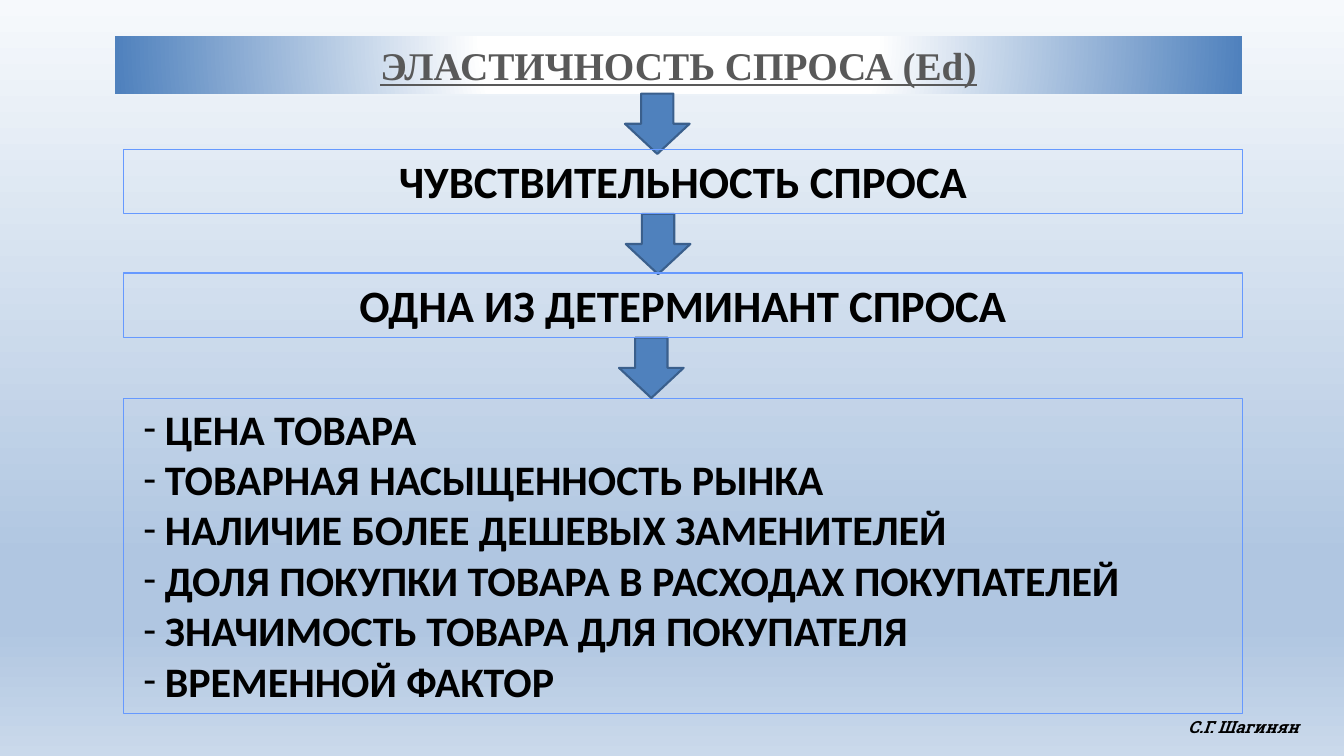
from lxml import etree
from pptx import Presentation
from pptx.dml.color import RGBColor
from pptx.enum.shapes import MSO_SHAPE
from pptx.enum.text import MSO_ANCHOR, MSO_AUTO_SIZE, PP_ALIGN
from pptx.oxml.ns import qn
from pptx.util import Cm, Pt

RECT, DOWN_ARROW = MSO_SHAPE.RECTANGLE, MSO_SHAPE.DOWN_ARROW
TOP, NO_FIT = MSO_ANCHOR.TOP, MSO_AUTO_SIZE.NONE
LEFT, CENTER = PP_ALIGN.LEFT, PP_ALIGN.CENTER

COLORS = {
    "sky_top": "F6F9FC", "sky": "B0C6E1", "sky_bottom": "CAD9EB",
    "white": "FFFFFF", "blue": "4F81BD", "arrow_line": "3A5F8C",
    "frame": "6699FF", "title": "595959", "text": "000000",
}
STEPS = ["ЧУВСТВИТЕЛЬНОСТЬ СПРОСА", "ОДНА ИЗ ДЕТЕРМИНАНТ СПРОСА"]
FACTORS = [
    "ЦЕНА ТОВАРА",
    "ТОВАРНАЯ НАСЫЩЕННОСТЬ РЫНКА",
    "НАЛИЧИЕ БОЛЕЕ ДЕШЕВЫХ ЗАМЕНИТЕЛЕЙ",
    "ДОЛЯ ПОКУПКИ ТОВАРА В РАСХОДАХ ПОКУПАТЕЛЕЙ",
    "ЗНАЧИМОСТЬ ТОВАРА ДЛЯ ПОКУПАТЕЛЯ",
    "ВРЕМЕННОЙ ФАКТОР",
]


def rgb(name):
    return RGBColor.from_string(COLORS[name])


def set_gradient(owner, fill, stops):
    """Fill with (percent, colour) stops and return the emptied gradFill."""
    fill.gradient()
    grad = next(owner.element.iter(qn("a:gradFill")))
    for child in list(grad):
        grad.remove(child)
    gs_list = etree.SubElement(grad, qn("a:gsLst"))
    for percent, name in stops:
        gs = etree.SubElement(gs_list, qn("a:gs"), pos=str(percent * 1000))
        etree.SubElement(gs, qn("a:srgbClr"), val=COLORS[name])
    return grad


def place(sp, box):
    sp.left, sp.top, sp.width, sp.height = (Cm(v) for v in box)


def frame(sp):
    sp.fill.background()
    sp.line.color.rgb = rgb("frame")
    sp.line.width = Pt(0.75)


def write(sp, text, size, font="Calibri", color="text", align=CENTER):
    tf = sp.text_frame
    tf.text = text
    tf.word_wrap = True
    tf.auto_size = NO_FIT
    tf.vertical_anchor = TOP
    for p in tf.paragraphs:
        p.alignment = align
        p.space_before = Pt(0)
        for r in p.runs:
            r.font.name = font
            r.font.size = Pt(size)
            r.font.bold = True
            r.font.color.rgb = rgb(color)
    return tf


def add_background(s):
    stops = [(0, "sky_top"), (74, "sky"), (83, "sky"), (100, "sky_bottom")]
    grad = set_gradient(s, s.background.fill, stops)
    etree.SubElement(grad, qn("a:lin"), ang="5400000", scaled="0")


def add_title(s, box):
    sp = s.shapes.title
    place(sp, box)
    grad = set_gradient(sp, sp.fill, [(0, "white"), (35, "white"), (100, "blue")])
    glow = etree.SubElement(grad, qn("a:path"), path="circle")
    etree.SubElement(glow, qn("a:fillToRect"),
                     l="50000", t="-80000", r="50000", b="180000")
    tf = write(sp, "ЭЛАСТИЧНОСТЬ СПРОСА (Ed)", 28, "Times New Roman", "title")
    tf.paragraphs[0].runs[0].font.underline = True


def add_step(s, box, text):
    sp = s.shapes.add_shape(RECT, *(Cm(v) for v in box))
    sp.shadow.inherit = False
    frame(sp)
    write(sp, text, 32)


def add_arrow(s, x, y):
    sp = s.shapes.add_shape(DOWN_ARROW, Cm(x), Cm(y), Cm(1.63), Cm(1.52))
    sp.shadow.inherit = False
    sp.fill.solid()
    sp.fill.fore_color.rgb = rgb("blue")
    sp.line.color.rgb = rgb("arrow_line")
    sp.line.width = Pt(1.5)


def add_factors(s, box):
    sp = s.placeholders[1]
    place(sp, box)
    frame(sp)
    tf = write(sp, "\n".join(FACTORS), 30, align=LEFT)
    for p in tf.paragraphs:
        pPr = p._p.get_or_add_pPr()
        pPr.set("marL", str(Cm(0.78)))
        pPr.set("indent", str(Cm(-0.54)))
        etree.SubElement(pPr, qn("a:buFont"), typeface="Calibri")
        etree.SubElement(pPr, qn("a:buChar"), char="-")


def add_author(s, box):
    sp = s.shapes.add_textbox(*(Cm(v) for v in box))
    tf = write(sp, "С.Г. Шагинян", 12, "Roboto Slab", align=LEFT)
    tf.word_wrap = False
    tf.paragraphs[0].runs[0].font.italic = True


def main():
    prs = Presentation()
    prs.slide_width, prs.slide_height = Cm(33.87), Cm(19.05)
    s = prs.slides.add_slide(prs.slide_layouts[1])
    left, width, step_h = 3.12, 28.19, 1.63
    step_tops = [3.76, 6.88]

    add_background(s)
    add_title(s, (2.9, 0.91, 28.4, 1.45))
    arrow_tops = [2.36] + [top + step_h for top in step_tops]
    for x, y in zip([15.75, 15.77, 15.6], arrow_tops):
        add_arrow(s, x, y)
    for top, text in zip(step_tops, STEPS):
        add_step(s, (left, top, width, step_h), text)
    add_factors(s, (left, 10.03, width, 7.95))
    add_author(s, (29.69, 17.93, 3.66, 0.76))
    prs.save("out.pptx")


if __name__ == "__main__":
    main()
